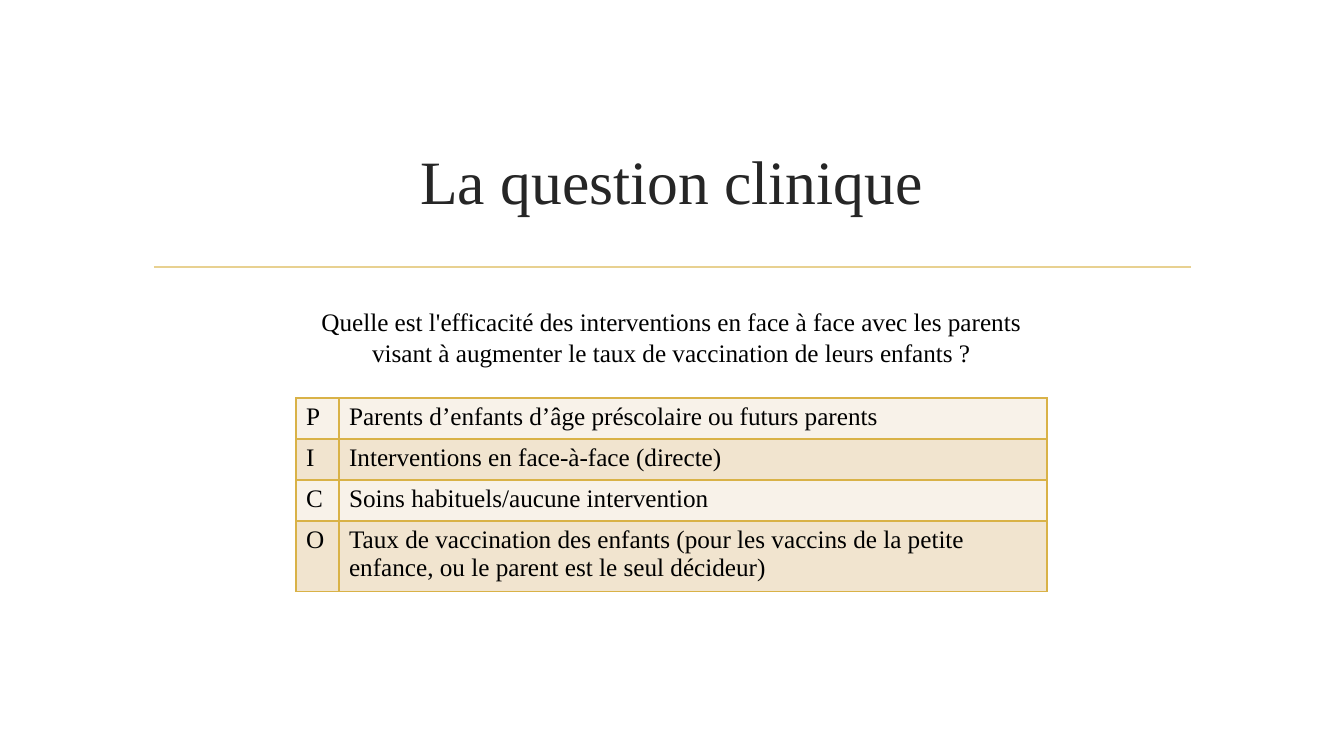
import pptx
import pptx.dml.color
import pptx.enum.shapes
import pptx.enum.text
import pptx.oxml.ns
import pptx.util
from lxml import etree

RGBColor = pptx.dml.color.RGBColor
PX = 914400 / 100.8
FONT = "Times New Roman"
BLACK = RGBColor(0x00, 0x00, 0x00)
CHARCOAL = RGBColor(0x26, 0x26, 0x26)
PALE_GOLD = RGBColor(0xE8, 0xD1, 0x91)
GOLD = RGBColor(0xD9, 0xB2, 0x47)
BANDS = [RGBColor(0xF8, 0xF2, 0xE9), RGBColor(0xF1, 0xE4, 0xCF)]

PICO = [
    ("P", "Parents d’enfants d’âge préscolaire ou futurs parents"),
    ("I", "Interventions en face-à-face (directe)"),
    ("C", "Soins habituels/aucune intervention"),
    ("O", "Taux de vaccination des enfants (pour les vaccins de la petite "
          "enfance, ou le parent est le seul décideur)"),
]
COLUMN_WIDTHS = [43, 708]
ROW_HEIGHTS = [41, 41, 41, 66]


def px(*lengths):
    return [pptx.util.Emu(round(length * PX)) for length in lengths]


def style_paragraph(para, size, color):
    para.font.name = FONT
    para.font.size = pptx.util.Pt(size)
    para.font.color.rgb = color


def add_centred_text(page, place, text, size, color):
    frame = page.shapes.add_textbox(*px(*place)).text_frame
    frame.word_wrap = True
    frame.vertical_anchor = pptx.enum.text.MSO_ANCHOR.MIDDLE
    para = frame.paragraphs[0]
    para.text = text
    para.alignment = pptx.enum.text.PP_ALIGN.CENTER
    style_paragraph(para, size, color)


def add_rule(page, left, right, y):
    rule = page.shapes.add_connector(
        pptx.enum.shapes.MSO_CONNECTOR.STRAIGHT, *px(left, y, right, y))
    rule.line.color.rgb = PALE_GOLD
    rule.line.width = pptx.util.Pt(1.25)
    etree.SubElement(rule._element.spPr, pptx.oxml.ns.qn("a:effectLst"))


def add_borders(cell):
    """Draw a thin gold line on all four sides; call before setting the fill."""
    properties = cell._tc.get_or_add_tcPr()
    for side in ("L", "R", "T", "B"):
        line = etree.SubElement(
            properties, pptx.oxml.ns.qn(f"a:ln{side}"), w=str(pptx.util.Pt(1)))
        fill = etree.SubElement(line, pptx.oxml.ns.qn("a:solidFill"))
        etree.SubElement(fill, pptx.oxml.ns.qn("a:srgbClr"), val=str(GOLD))


def add_pico_table(page, left, top):
    table = page.shapes.add_table(
        len(PICO), len(COLUMN_WIDTHS),
        *px(left, top, sum(COLUMN_WIDTHS), sum(ROW_HEIGHTS))).table
    table.first_row = table.horz_banding = False
    for column, width in zip(table.columns, px(*COLUMN_WIDTHS)):
        column.width = width
    for row, height in zip(table.rows, px(*ROW_HEIGHTS)):
        row.height = height
    for index, texts in enumerate(PICO):
        for cell, text in zip(table.rows[index].cells, texts):
            cell.text = text
            style_paragraph(cell.text_frame.paragraphs[0], 18, BLACK)
            add_borders(cell)
            cell.fill.solid()
            cell.fill.fore_color.rgb = BANDS[index % 2]


def main():
    deck = pptx.Presentation()
    deck.slide_width, deck.slide_height = px(1344, 756)
    page = deck.slides.add_slide(deck.slide_layouts[6])
    add_rule(page, 154, 1191, 267)
    add_centred_text(page, (143, 108, 1058, 144), "La question clinique", 44, CHARCOAL)
    add_pico_table(page, 296, 398)
    add_centred_text(
        page, (296, 301, 751, 72),
        "Quelle est l'efficacité des interventions en face à face avec les parents "
        "visant à augmenter le taux de vaccination de leurs enfants ?", 18, BLACK)
    deck.save("out.pptx")


if __name__ == "__main__":
    main()
